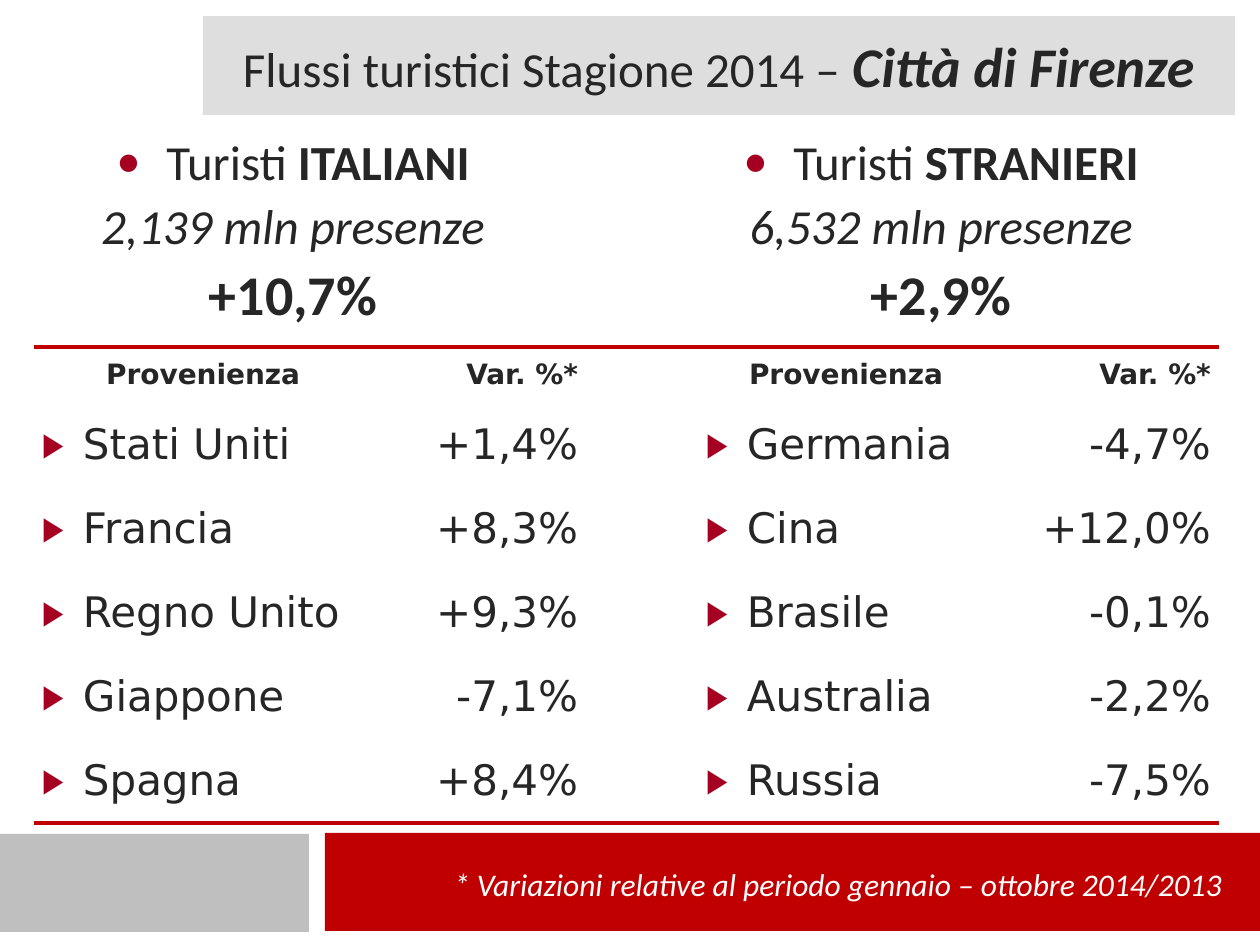
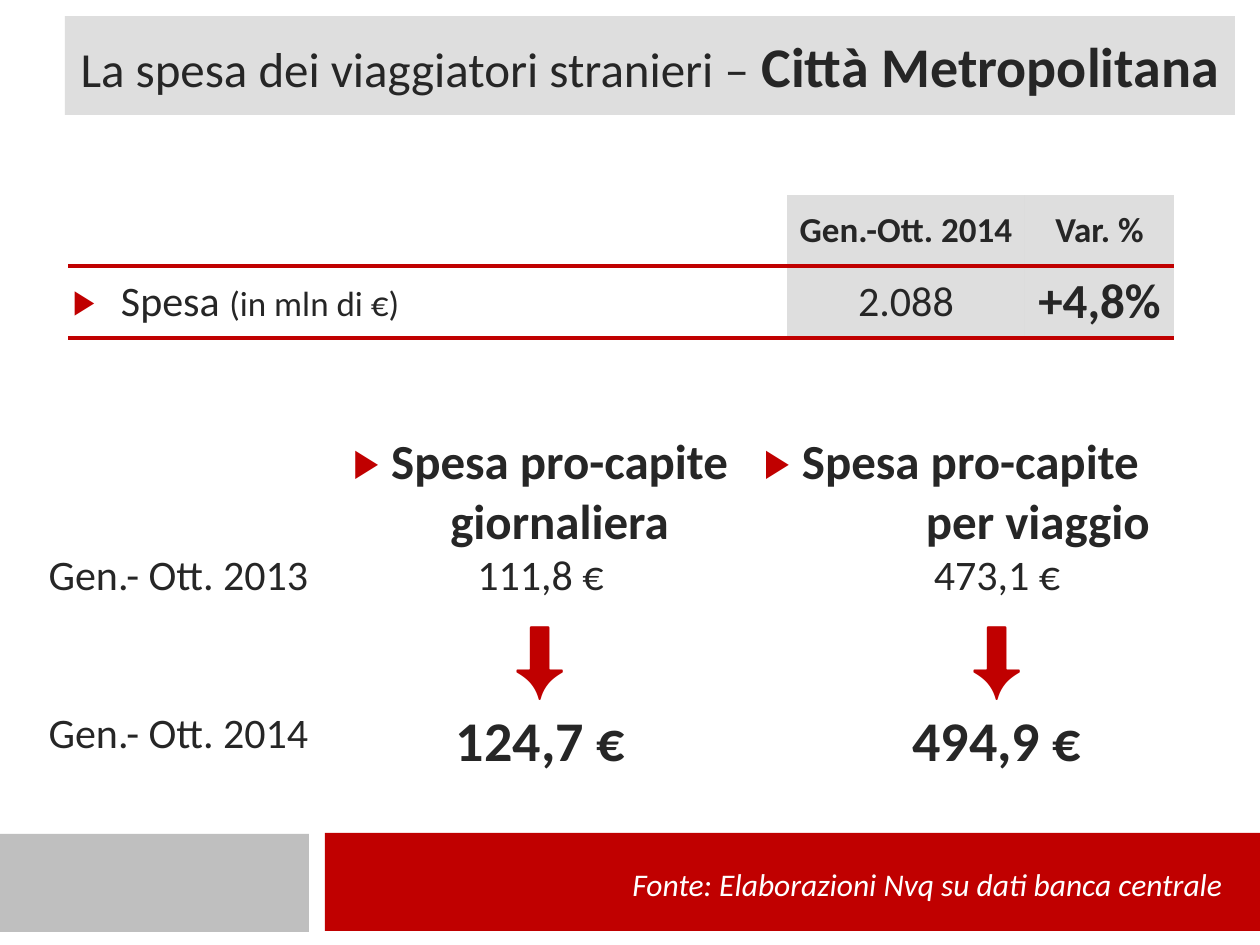
from dataclasses import dataclass

from lxml import etree
from pptx import Presentation
from pptx.dml.color import RGBColor
from pptx.enum.shapes import MSO_SHAPE
from pptx.enum.text import MSO_ANCHOR, MSO_AUTO_SIZE, PP_ALIGN
from pptx.oxml.ns import qn
from pptx.util import Pt

RECTANGLE = MSO_SHAPE.RECTANGLE
MIDDLE, TOP = MSO_ANCHOR.MIDDLE, MSO_ANCHOR.TOP
LEFT, CENTER, RIGHT = PP_ALIGN.LEFT, PP_ALIGN.CENTER, PP_ALIGN.RIGHT
NO_STYLE = "{2D5ABB26-0587-4C30-8999-92F81FD0307C}"
TITLE_ONLY = 5
PX_PER_INCH = 126


@dataclass(frozen=True)
class Theme:
    ink: str = "262626"
    white: str = "FFFFFF"
    grey: str = "BFBFBF"
    red: str = "C00000"
    crimson: str = "A50021"
    font: str = "Calibri"
    table_font: str = "DejaVu Sans"
    arrow: int = 48
    strong: int = 32
    heading: int = 28
    body: int = 24
    label: int = 20
    footer: int = 18
    small: int = 16


THEME = Theme()


def px(value):
    return round(value * 914400 / PX_PER_INCH)


def write(paragraph, *runs, align=LEFT, size=THEME.heading, color=THEME.ink,
          font=THEME.font, bold=False, italic=False, before=0, after=0,
          bullet=None, bullet_color=THEME.red, bullet_percent=80,
          indent=0, hanging=0):
    """Fill a paragraph; a run is a text, or a text with its own format."""
    paragraph.alignment = align
    paragraph.space_before, paragraph.space_after = Pt(before), Pt(after)
    properties = paragraph._p.get_or_add_pPr()
    if indent:
        properties.set("marL", str(px(indent)))
        properties.set("indent", str(-px(hanging)))
    if bullet:
        holder = etree.SubElement(properties, qn("a:buClr"))
        etree.SubElement(holder, qn("a:srgbClr"), val=bullet_color)
        etree.SubElement(properties, qn("a:buSzPct"), val=str(bullet_percent * 1000))
        etree.SubElement(properties, qn("a:buFont"), typeface=THEME.font)
        etree.SubElement(properties, qn("a:buChar"), char=bullet)
    base = dict(size=size, bold=bold, italic=italic)
    for item in runs:
        text, own = (item, {}) if isinstance(item, str) else item
        style = base | own
        run = paragraph.add_run()
        run.text = text
        run.font.name = font
        run.font.size = Pt(style["size"])
        run.font.bold, run.font.italic = style["bold"], style["italic"]
        run.font.color.rgb = RGBColor.from_string(color)


def fill_solid(fill, element, color, alpha=None):
    fill.solid()
    fill.fore_color.rgb = RGBColor.from_string(color)
    if alpha:
        tint = next(element.iter(qn("a:srgbClr")))
        etree.SubElement(tint, qn("a:alpha"), val=str(alpha * 1000))


def place(shape, left, top, width, height):
    shape.left, shape.top = px(left), px(top)
    shape.width, shape.height = px(width), px(height)


def add_bands(layout, slide):
    """Draw the bottom bands and hand them to the layout all slides share."""
    bands = [((-1, 834, 310, 98), THEME.grey), ((325, 833, 935, 98), THEME.red)]
    for number, (box, color) in enumerate(bands, start=101):
        band = slide.shapes.add_shape(RECTANGLE, *map(px, box))
        band.shadow.inherit = False
        fill_solid(band.fill, band.element.spPr, color)
        band.line.fill.background()
        band.element.nvSpPr.cNvPr.set("id", str(number))
        layout.shapes.element.append(band.element)


def set_title(slide, left, *runs):
    title = slide.shapes.title
    place(title, left, 16, 1235 - left, 99)
    fill_solid(title.fill, title.element.spPr, THEME.grey, alpha=50)
    frame = title.text_frame
    frame.auto_size = MSO_AUTO_SIZE.NONE
    frame.word_wrap = True
    frame.vertical_anchor = MIDDLE
    write(frame.paragraphs[0], *runs, align=CENTER)


def add_text_box(slide, *box):
    frame = slide.shapes.add_textbox(*map(px, box)).text_frame
    frame.word_wrap = True
    return frame


def add_footer(slide, left, text):
    frame = add_text_box(slide, left, 859, 1235 - left, 50)
    write(frame.paragraphs[0], text, align=RIGHT, size=THEME.footer,
          color=THEME.white, italic=True)


def add_visitor_summary(slide, left, group, stays, change):
    frame = add_text_box(slide, left, 125, 536, 210)
    common = dict(align=CENTER, after=3)
    write(frame.paragraphs[0], "Turisti ", (group, dict(bold=True)), bullet="•",
          bullet_color=THEME.crimson, bullet_percent=100, indent=50, hanging=50,
          **common)
    write(frame.add_paragraph(), stays, italic=True, **common)
    write(frame.add_paragraph(), change, size=THEME.strong, bold=True, **common)


def add_table(slide, left, top, columns, rows, margins, anchor):
    """Add a table without style; margins are (side, top and bottom)."""
    frame = slide.shapes.add_table(len(rows), len(columns), px(left), px(top),
                                   px(sum(columns)), px(sum(rows)))
    next(frame.element.iter(qn("a:tableStyleId"))).text = NO_STYLE
    table = frame.table
    table.first_row = table.horz_banding = False
    for column, width in zip(table.columns, columns):
        column.width = px(width)
    for row, height in zip(table.rows, rows):
        row.height = px(height)
    side, edge = map(px, margins)
    for cell in table.iter_cells():
        cell.margin_left = cell.margin_right = side
        cell.margin_top = cell.margin_bottom = edge
        cell.vertical_anchor = anchor
        cell.fill.background()
    return table


def write_cell(table, row, column, *runs, **style):
    write(table.cell(row, column).text_frame.paragraphs[0], *runs, **style)


def rule_row(table, row, tag, points):
    """Draw a red border along a row; tag is lnT or lnB."""
    for column in range(len(table.columns)):
        properties = table.cell(row, column)._tc.get_or_add_tcPr()
        line = etree.Element(qn(f"a:{tag}"), w=str(Pt(points)))
        fill = etree.SubElement(line, qn("a:solidFill"))
        etree.SubElement(fill, qn("a:srgbClr"), val=THEME.red)
        properties.insert(0, line)


def add_origin_table(slide, origins):
    table = add_table(slide, 34, 347, [348, 204, 112, 306, 215],
                      [56] + [84] * 5, (8, 5), MIDDLE)
    header = dict(font=THEME.table_font, size=THEME.small, bold=True, before=6)
    body = dict(font=THEME.table_font, size=THEME.body, before=6)
    for first, countries in zip((0, 3), origins):
        write_cell(table, 0, first, "Provenienza ", align=CENTER, **header)
        write_cell(table, 0, first + 1, "Var. %*", align=RIGHT, **header)
        for row, (country, change) in enumerate(countries, start=1):
            write_cell(table, row, first, country, bullet="▶", indent=41,
                       bullet_color=THEME.crimson, hanging=41, **body)
            write_cell(table, row, first + 1, change, align=RIGHT, **body)
    rule_row(table, 0, "lnT", 3)
    rule_row(table, 5, "lnB", 3)


def add_spending_table(slide):
    table = add_table(slide, 68, 195, [719, 238, 149], [71, 72], (5, 5), MIDDLE)
    for row in range(2):
        for column in (1, 2):
            cell = table.cell(row, column)
            fill_solid(cell.fill, cell._tc.tcPr, THEME.grey, alpha=50)
    for column, text in enumerate(("Gen.-Ott. 2014", "Var. %"), start=1):
        write_cell(table, 0, column, text, align=CENTER, size=THEME.label, bold=True)
    write_cell(table, 1, 0, "Spesa ", ("(in mln di €)", dict(size=THEME.label)),
               size=THEME.body, bullet="▶", indent=48, hanging=48)
    write_cell(table, 1, 1, "2.088", align=CENTER, size=THEME.body)
    write_cell(table, 1, 2, "+4,8%", align=CENTER, bold=True)
    rule_row(table, 1, "lnB", 2.25)
    rule_row(table, 1, "lnT", 2.25)


def add_per_head_table(slide):
    table = add_table(slide, 35, 433, [287, 437, 476], [117, 57, 99, 67],
                      (5, 0), TOP)
    heading = dict(bold=True, bullet="▶", hanging=38)
    write_cell(table, 0, 1, "Spesa pro-capite giornaliera", align=CENTER,
               indent=38, **heading)
    write_cell(table, 0, 2, "Spesa pro-capite", indent=38, **heading)
    write(table.cell(0, 2).text_frame.add_paragraph(), "per viaggio",
          bold=True, indent=162)
    plain = dict(align=CENTER, size=THEME.body)
    for row, period in ((1, "Gen.- Ott. 2013"), (3, "Gen.- Ott. 2014")):
        write_cell(table, row, 0, period, **plain)
    amounts = [("111,8 €", "124,7 €"), ("473,1 €", "494,9 €")]
    for column, (earlier, later) in enumerate(amounts, start=1):
        write_cell(table, 1, column, earlier, **plain)
        write_cell(table, 2, column, "⬇", align=CENTER, size=THEME.arrow,
                   color=THEME.red)
        write_cell(table, 3, column, later, align=CENTER, size=THEME.strong,
                   bold=True)


def build_flows_slide(slide):
    set_title(slide, 203, "Flussi turistici Stagione 2014 –",
              (" Città di Firenze", dict(size=THEME.strong, bold=True, italic=True)))
    add_visitor_summary(slide, 25, "ITALIANI", "2,139 mln presenze", "+10,7%")
    add_visitor_summary(slide, 673, "STRANIERI", "6,532 mln presenze", "+2,9%")
    add_origin_table(slide, [
        [("Stati Uniti", "+1,4%"), ("Francia", "+8,3%"), ("Regno Unito", "+9,3%"),
         ("Giappone", "-7,1%"), ("Spagna", "+8,4%")],
        [("Germania", "-4,7%"), ("Cina", "+12,0%"), ("Brasile", "-0,1%"),
         ("Australia", "-2,2%"), ("Russia", "-7,5%")],
    ])
    add_footer(slide, 422,
               "* Variazioni relative al periodo gennaio – ottobre 2014/2013")


def build_spending_slide(slide):
    set_title(slide, 65, "La spesa dei viaggiatori stranieri –",
              (" Città Metropolitana ", dict(size=THEME.strong, bold=True)))
    add_spending_table(slide)
    add_footer(slide, 610, "Fonte: Elaborazioni Nvq su dati banca centrale")
    add_per_head_table(slide)


def main():
    presentation = Presentation()
    presentation.slide_width, presentation.slide_height = px(1260), px(945)
    layout = presentation.slide_layouts[TITLE_ONLY]
    flows = presentation.slides.add_slide(layout)
    add_bands(layout, flows)
    build_flows_slide(flows)
    build_spending_slide(presentation.slides.add_slide(layout))
    presentation.save("out.pptx")


if __name__ == "__main__":
    main()
